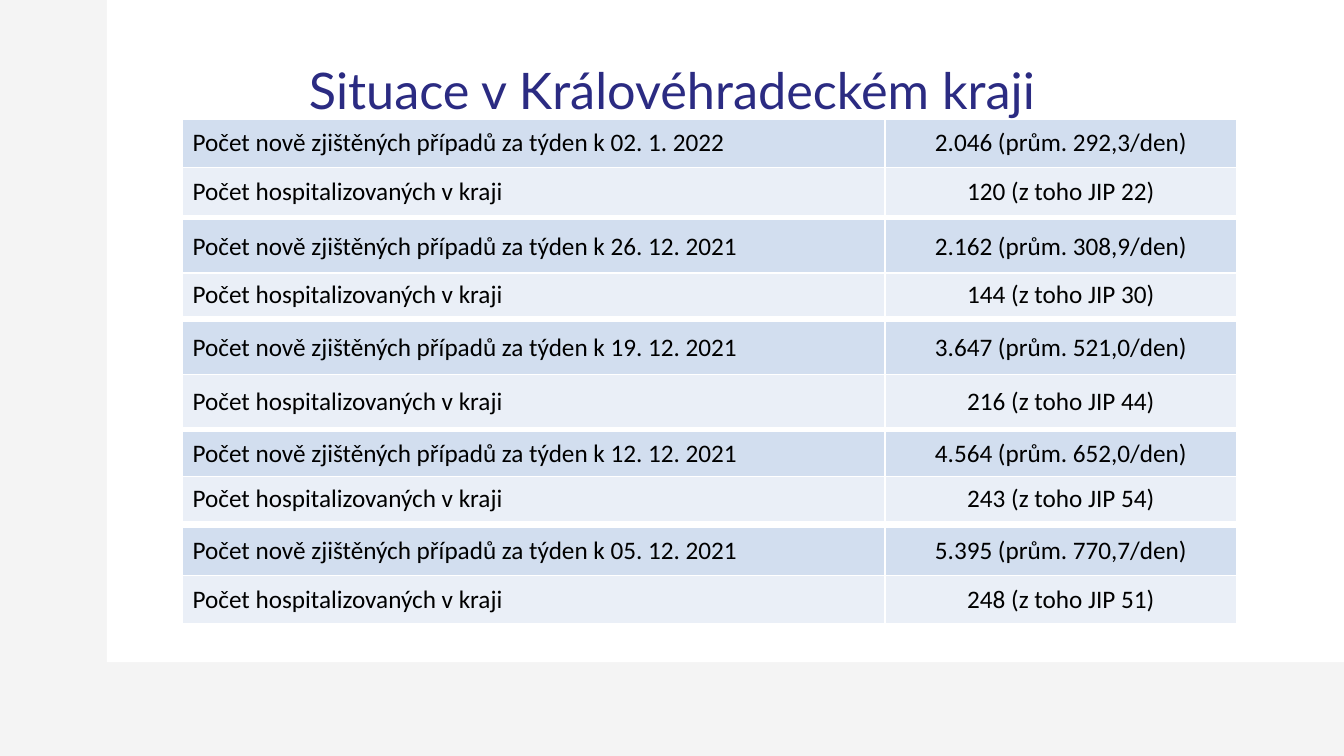
from lxml.etree import SubElement
from pptx import Presentation
from pptx.dml.color import RGBColor
from pptx.enum.shapes import MSO_SHAPE as Shape
from pptx.enum.text import MSO_ANCHOR as Anchor, PP_ALIGN as Align
from pptx.oxml.ns import qn
from pptx.util import Pt


def color(hex_code):
    return RGBColor.from_string(hex_code)


def add_borders(cell, hex_code, width):
    properties = cell._tc.get_or_add_tcPr()
    for side in ("a:lnL", "a:lnR", "a:lnT", "a:lnB"):
        line = SubElement(properties, qn(side), w=str(Pt(width)))
        fill = SubElement(line, qn("a:solidFill"))
        SubElement(fill, qn("a:srgbClr"), val=hex_code)


deck = Presentation()
deck.slide_width, deck.slide_height = Pt(960), Pt(540)
page = deck.slides.add_slide(deck.slide_layouts[6])

# Grey background with a white panel
page.background.fill.solid()
page.background.fill.fore_color.rgb = color("F4F4F4")
panel = page.shapes.add_shape(Shape.RECTANGLE, Pt(76.4), 0, Pt(883.6), Pt(473))
panel.shadow.inherit = False
panel.fill.solid()
panel.fill.fore_color.rgb = color("FFFFFF")
panel.line.fill.background()

# Title
title = page.shapes.add_textbox(Pt(66), Pt(28.8), Pt(828), Pt(75.6)).text_frame
title.word_wrap = True
title.vertical_anchor = Anchor.MIDDLE
para = title.paragraphs[0]
para.text = "Situace v Královéhradeckém kraji"
para.alignment = Align.CENTER
para.line_spacing = 0.9
para.font.name = "Lato"
para.font.size = Pt(36)
para.font.color.rgb = color("2B2B82")

# One table per week: top, row heights, date, new cases, patients
weeks = [
    (85.2, (34.4, 34.4), "02. 1. 2022", "2.046 (prům. 292,3/den)", "120 (z toho JIP 22)"),
    (157, (38, 31.2), "26. 12. 2021", "2.162 (prům. 308,9/den)", "144 (z toho JIP 30)"),
    (229.8, (38, 38), "19. 12. 2021", "3.647 (prům. 521,0/den)", "216 (z toho JIP 44)"),
    (308.2, (32.1, 32.1), "12. 12. 2021", "4.564 (prům. 652,0/den)", "243 (z toho JIP 54)"),
    (376.6, (34.4, 34.4), "05. 12. 2021", "5.395 (prům. 770,7/den)", "248 (z toho JIP 51)"),
]
column_widths = (501.8, 251.2)
row_fills = ("D2DEEF", "EAEFF7")

for top, heights, date, cases, patients in weeks:
    table = page.shapes.add_table(
        2, 2, Pt(130.4), Pt(top), Pt(sum(column_widths)), Pt(sum(heights))
    ).table
    table.first_row = table.horz_banding = False
    for column, width in zip(table.columns, column_widths):
        column.width = Pt(width)
    rows = [
        (f"Počet nově zjištěných případů za týden k {date}", cases),
        ("Počet hospitalizovaných v kraji", patients),
    ]
    for r, texts in enumerate(rows):
        table.rows[r].height = Pt(heights[r])
        for c, text in enumerate(texts):
            cell = table.cell(r, c)
            add_borders(cell, "FFFFFF", 1)
            cell.fill.solid()
            cell.fill.fore_color.rgb = color(row_fills[r])
            cell.vertical_anchor = Anchor.MIDDLE
            para = cell.text_frame.paragraphs[0]
            para.text = text
            para.alignment = Align.CENTER if c else Align.LEFT
            para.font.name = "Calibri"
            para.font.size = Pt(18)
            para.font.color.rgb = color("000000")

deck.save("out.pptx")
